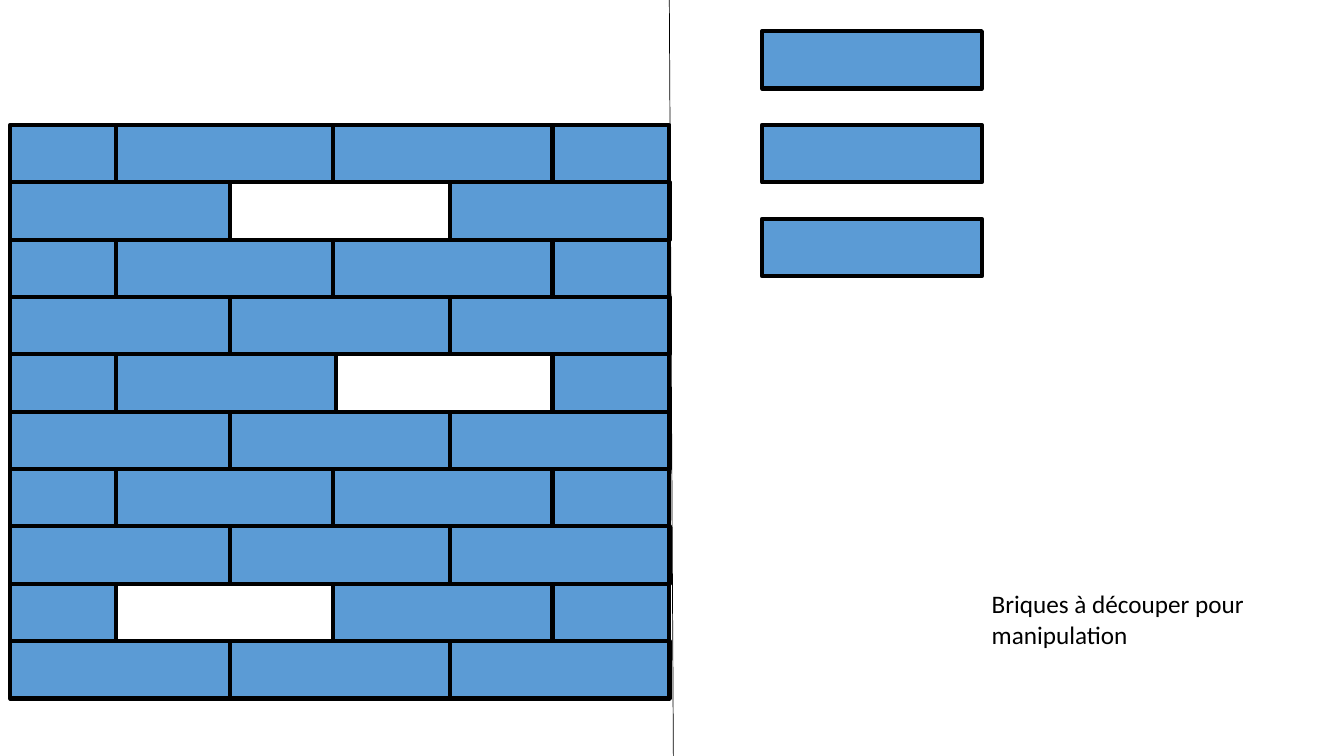
"""Build a brick wall with missing bricks and spare bricks to cut out."""
from dataclasses import dataclass

from lxml.etree import SubElement
from pptx import Presentation
from pptx.dml.color import RGBColor
from pptx.enum.shapes import MSO_CONNECTOR as Connector, MSO_SHAPE as Shape
from pptx.enum.text import MSO_AUTO_SIZE as AutoSize
from pptx.oxml.ns import qn
from pptx.util import Pt


@dataclass(frozen=True)
class Theme:
    """Colours, font and type size of the slide."""
    brick: RGBColor = RGBColor(0x5B, 0x9B, 0xD5)
    ink: RGBColor = RGBColor(0, 0, 0)
    font: str = "Calibri"
    caption_size: int = 18


THEME = Theme()
BRICK_WIDTH, BRICK_HEIGHT = 157, 41
WALL_LEFT, WALL_TOP, WALL_ROWS = 7.2, 89.3, 10
COURSE_PITCH = 40.96
STAGGERED_COURSE = [(0, 75.6), (75.6, BRICK_WIDTH), (230.4, BRICK_WIDTH), (387.4, 83.5)]
FULL_COURSE = [(column * BRICK_WIDTH, BRICK_WIDTH) for column in range(3)]
MISSING_BRICKS = {(1, 1), (4, 2), (8, 1)}
SPARE_LEFT, SPARE_TOP, SPARE_PITCH, SPARE_COUNT = 544.3, 22.3, 67, 3


def add_brick(slide, left, top, width=BRICK_WIDTH):
    """Draw one outlined brick."""
    brick = slide.shapes.add_shape(
        Shape.RECTANGLE, Pt(left), Pt(top), Pt(width), Pt(BRICK_HEIGHT))
    brick.shadow.inherit = False
    brick.fill.solid()
    brick.fill.fore_color.rgb = THEME.brick
    brick.line.color.rgb = THEME.ink
    brick.line.width = Pt(3)


def add_wall(slide):
    """Lay alternating courses, leaving out the missing bricks."""
    for row in range(WALL_ROWS):
        course = FULL_COURSE if row % 2 else STAGGERED_COURSE
        for column, (offset, width) in enumerate(course):
            if (row, column) not in MISSING_BRICKS:
                add_brick(slide, WALL_LEFT + offset, WALL_TOP + row * COURSE_PITCH, width)


def add_spare_bricks(slide):
    """Stack the bricks to cut out."""
    for index in range(SPARE_COUNT):
        add_brick(slide, SPARE_LEFT, SPARE_TOP + index * SPARE_PITCH)


def add_divider(slide):
    """Draw the thin line between the wall and the spare bricks."""
    divider = slide.shapes.add_connector(
        Connector.STRAIGHT, Pt(478.1), Pt(0), Pt(481), Pt(540))
    divider.line.color.rgb = THEME.ink
    divider.line.width = Pt(0.5)
    SubElement(divider._element.spPr, qn("a:effectLst"))


def add_caption(slide, text):
    """Write the instruction beside the spare bricks."""
    caption = slide.shapes.add_textbox(Pt(701.3), Pt(416.9), Pt(200), Pt(51)).text_frame
    caption.word_wrap = True
    caption.auto_size = AutoSize.SHAPE_TO_FIT_TEXT
    caption.text = text
    font = caption.paragraphs[0].font
    font.name = THEME.font
    font.size = Pt(THEME.caption_size)
    font.color.rgb = THEME.ink


def main():
    """Assemble and save the slide."""
    presentation = Presentation()
    presentation.slide_width, presentation.slide_height = Pt(960), Pt(540)
    slide = presentation.slides.add_slide(presentation.slide_layouts[6])
    add_divider(slide)
    add_wall(slide)
    add_spare_bricks(slide)
    add_caption(slide, "Briques à découper pour manipulation")
    presentation.save("out.pptx")


if __name__ == "__main__":
    main()
